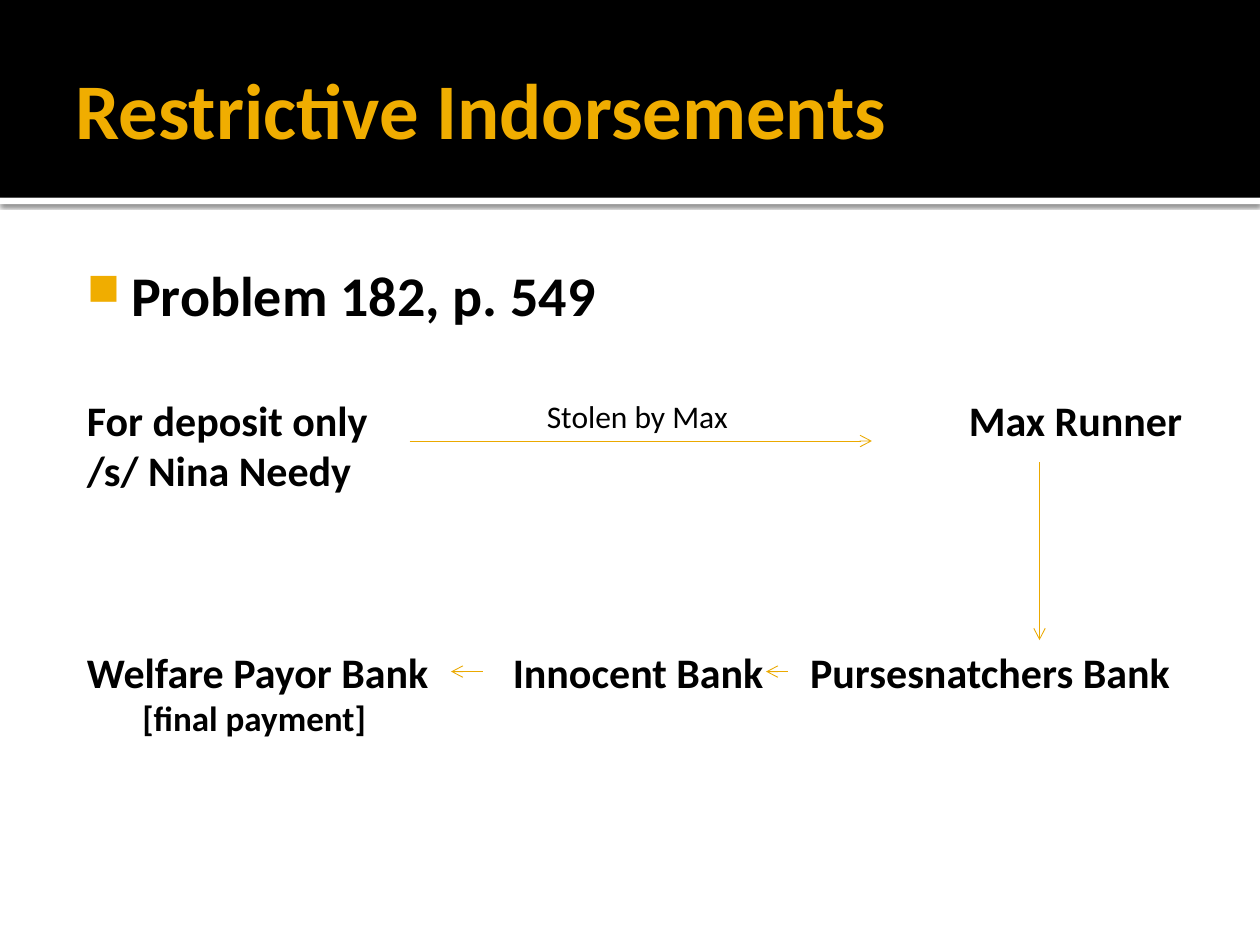
"""Builds the Restrictive Indorsements slide."""
from lxml import etree
from pptx import Presentation
from pptx.dml.color import RGBColor
from pptx.enum.shapes import MSO_CONNECTOR, MSO_SHAPE
from pptx.enum.text import MSO_ANCHOR, PP_ALIGN
from pptx.oxml import parse_xml
from pptx.oxml.ns import nsdecls, qn
from pptx.util import Inches, Pt

STRAIGHT = MSO_CONNECTOR.STRAIGHT
RECT = MSO_SHAPE.RECTANGLE
MIDDLE = MSO_ANCHOR.MIDDLE
LEFT = PP_ALIGN.LEFT

BLACK = RGBColor(0x00, 0x00, 0x00)
WHITE = RGBColor(0xFF, 0xFF, 0xFF)
GOLD = RGBColor(0xF0, 0xAD, 0x00)
ARROW = RGBColor(0xEB, 0xA9, 0x00)
FONT = "Calibri"


class SlideBuilder:
    def __init__(self, slide):
        self.slide = slide
        self.shapes = slide.shapes

    def run(self, p, text, size, color=BLACK, bold=True):
        r = p.add_run()
        r.text = text
        r.font.name = FONT
        r.font.size = Pt(size)
        r.font.bold = bold
        r.font.color.rgb = color

    def band(self, top, height, color):
        sp = self.shapes.add_shape(RECT, 0, Inches(top), Inches(10), Inches(height))
        sp.shadow.inherit = False
        sp.fill.solid()
        sp.fill.fore_color.rgb = color
        sp.line.fill.background()
        return sp

    def drop_shadow(self, sp):
        effects = sp._element.spPr.find(qn("a:effectLst"))
        effects.append(parse_xml(
            f'<a:outerShdw {nsdecls("a")} blurRad="{Pt(2.5)}" dist="{Pt(0.8)}" '
            'dir="5400000" algn="tl" rotWithShape="0">'
            '<a:srgbClr val="000000"><a:alpha val="60000"/></a:srgbClr></a:outerShdw>'))

    def title(self, text):
        sp = self.shapes.title
        self.shapes._spTree.append(sp._element)
        sp.left, sp.top = Inches(0.5), Inches(0.17)
        sp.width, sp.height = Inches(9), Inches(1.37)
        tf = sp.text_frame
        tf.vertical_anchor = MIDDLE
        tf.margin_left = Inches(0.1)
        tf.margin_top = tf.margin_right = tf.margin_bottom = Inches(0.05)
        p = tf.paragraphs[0]
        p.alignment = LEFT
        self.run(p, text, 45, GOLD)

    def label(self, left, top, width, lines, size, bold=True):
        height = len(lines) * size * 1.22 / 72
        sp = self.shapes.add_textbox(Inches(left), Inches(top), Inches(width), Inches(height))
        tf = sp.text_frame
        tf.word_wrap = True
        tf.margin_left = tf.margin_top = tf.margin_right = tf.margin_bottom = 0
        for i, line in enumerate(lines):
            p = tf.add_paragraph() if i else tf.paragraphs[0]
            self.run(p, line, size, bold=bold)
        return sp

    def bullet(self, left, top, width, text, size):
        sp = self.label(left, top, width, [text], size)
        pPr = sp.text_frame.paragraphs[0]._p.get_or_add_pPr()
        pPr.set("marL", str(Inches(0.35)))
        pPr.set("indent", str(-Inches(0.35)))
        color = etree.SubElement(pPr, qn("a:buClr"))
        etree.SubElement(color, qn("a:srgbClr"), val=str(GOLD))
        etree.SubElement(pPr, qn("a:buSzPct"), val="80000")
        etree.SubElement(pPr, qn("a:buChar"), char="■")

    def arrow(self, x1, y1, x2, y2):
        cxn = self.shapes.add_connector(STRAIGHT, Inches(x1), Inches(y1), Inches(x2), Inches(y2))
        cxn.line.color.rgb = ARROW
        cxn.line.width = Pt(0.5)
        etree.SubElement(cxn.line._get_or_add_ln(), qn("a:tailEnd"), type="arrow")
        etree.SubElement(cxn._element.spPr, qn("a:effectLst"))


def main():
    prs = Presentation()
    prs.slide_width, prs.slide_height = Inches(10), Inches(7.5)
    s = SlideBuilder(prs.slides.add_slide(prs.slide_layouts[5]))

    s.drop_shadow(s.band(1.57, 0.05, WHITE))
    s.band(0, 1.57, BLACK)
    s.title("Restrictive Indorsements")
    s.bullet(0.69, 2.07, 8, "Problem 182, p. 549", 32)

    party_row, bank_row = 3.13, 5.13
    s.label(0.69, party_row, 2.5, ["For deposit only", "/s/ Nina Needy"], 24)
    s.label(7.69, party_row, 1.9, ["Max Runner"], 24)
    for left, width, bank in ((0.69, 2.85, "Welfare Payor Bank"),
                              (4.07, 2.1, "Innocent Bank"),
                              (6.43, 3, "Pursesnatchers Bank")):
        s.label(left, bank_row, width, [bank], 24)
    s.label(1.13, 5.53, 2, ["[final payment]"], 20)
    s.label(4.34, 3.15, 1.6, ["Stolen by Max"], 18, bold=False)

    s.arrow(3.25, 3.5, 6.92, 3.5)
    s.arrow(8.25, 3.67, 8.25, 5.08)
    for start, end in ((6.25, 6.08), (3.83, 3.58)):
        s.arrow(start, 5.33, end, 5.33)

    prs.save("out.pptx")


if __name__ == "__main__":
    main()
